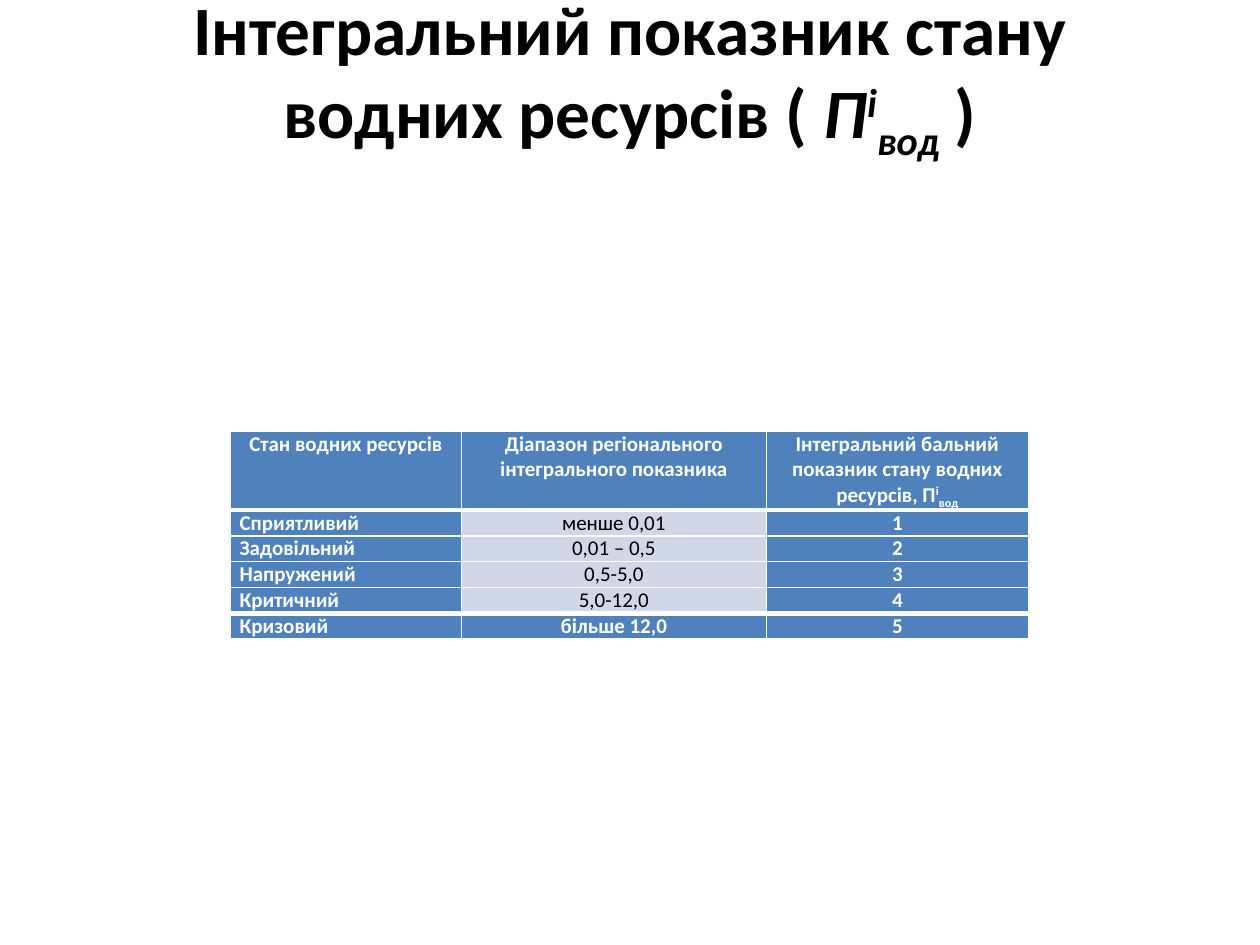
from dataclasses import dataclass

from lxml import etree
from pptx import Presentation
from pptx import util as u
from pptx.dml.color import RGBColor
from pptx.enum import text
from pptx.oxml.ns import qn

COLORS = {"black": "000000", "white": "FFFFFF", "blue": "4F81BD", "pale": "D0D8E8"}
FONT = "Calibri"
THIN, THICK = 1, 3
COLUMN_WIDTHS = (4.65, 6.15, 5.28)
HEADER_HEIGHT, ROW_HEIGHT = 1.55, 0.52


@dataclass
class Piece:
    text: str
    italic: bool = False
    baseline: int = 0


@dataclass
class CellStyle:
    fill: str = "blue"
    color: str = "white"
    bold: bool = True
    align: text.PP_ALIGN = text.PP_ALIGN.CENTER
    anchor: text.MSO_ANCHOR = text.MSO_ANCHOR.TOP


TITLE = [
    Piece("Інтегральний показник стану водних ресурсів ( "),
    Piece("П", italic=True),
    Piece("і", italic=True, baseline=30),
    Piece("вод", italic=True, baseline=-25),
    Piece(" )\v"),
]
HEADER = [
    [Piece("Стан водних ресурсів")],
    [Piece("Діапазон регіонального інтегрального показника")],
    [
        Piece("Інтегральний бальний показник стану водних ресурсів, П"),
        Piece("і", baseline=30),
        Piece("вод", baseline=-25),
    ],
]
STATES = [
    ("Сприятливий", "менше 0,01"),
    ("Задовільний", "0,01 – 0,5"),
    ("Напружений", "0,5-5,0"),
    ("Критичний", "5,0-12,0"),
    ("Кризовий", "більше 12,0"),
]


def rgb(name: str) -> RGBColor:
    return RGBColor.from_string(COLORS[name])


def set_attributes(target, values: dict) -> None:
    for name, value in values.items():
        setattr(target, name, value)


def write_pieces(paragraph, pieces: list[Piece], size: float, color: str, bold: bool) -> None:
    """Write runs; a vertical tab at the end of a piece becomes a line break."""
    for piece in pieces:
        run = paragraph.add_run()
        run.text = piece.text.rstrip("\v")
        set_attributes(run.font, {"name": FONT, "size": u.Pt(size),
                                  "bold": bold, "italic": piece.italic})
        run.font.color.rgb = rgb(color)
        if piece.baseline:
            run._r.get_or_add_rPr().set("baseline", str(piece.baseline * 1000))
        if piece.text.endswith("\v"):
            paragraph.add_line_break()
    paragraph.font.size = u.Pt(size)


def add_title(slide) -> None:
    box = slide.shapes.add_textbox(u.Cm(1.27), u.Cm(0.76), u.Cm(22.86), u.Cm(3.18))
    set_attributes(box.text_frame, {"word_wrap": True,
                                    "vertical_anchor": text.MSO_ANCHOR.MIDDLE})
    paragraph = box.text_frame.paragraphs[0]
    paragraph.alignment = text.PP_ALIGN.CENTER
    write_pieces(paragraph, TITLE, 39.6, "black", True)


def add_borders(cell, top: int, bottom: int) -> None:
    properties = cell._tc.get_or_add_tcPr()
    widths = {"lnL": THIN, "lnR": THIN, "lnT": top, "lnB": bottom}
    for tag, width in widths.items():
        line = etree.SubElement(properties, qn(f"a:{tag}"), w=str(u.Pt(width)))
        fill = etree.SubElement(line, qn("a:solidFill"))
        etree.SubElement(fill, qn("a:srgbClr"), val=COLORS["white"])


def cell_style(row: int, column: int) -> CellStyle:
    if row == 0:
        return CellStyle()
    if column == 0:
        return CellStyle(align=text.PP_ALIGN.JUSTIFY)
    if column == 1:
        middle = text.MSO_ANCHOR.MIDDLE
        if row == len(STATES):
            return CellStyle(anchor=middle)
        return CellStyle("pale", "black", False, anchor=middle)
    return CellStyle()


def fill_cell(cell, pieces: list[Piece], row: int, column: int) -> None:
    style = cell_style(row, column)
    last = len(STATES)
    add_borders(cell, THICK if row in (1, last) else THIN,
                THICK if row in (0, last - 1) else THIN)
    cell.fill.solid()
    cell.fill.fore_color.rgb = rgb(style.fill)
    set_attributes(cell, {"margin_left": u.Cm(0.18), "margin_right": u.Cm(0.18),
                          "margin_top": 0, "margin_bottom": 0,
                          "vertical_anchor": style.anchor})
    paragraph = cell.text_frame.paragraphs[0]
    paragraph.alignment = style.align
    write_pieces(paragraph, pieces, 12, style.color, style.bold)


def add_states_table(slide) -> None:
    rows = [HEADER] + [
        [[Piece(state)], [Piece(interval)], [Piece(str(score))]]
        for score, (state, interval) in enumerate(STATES, 1)
    ]
    height = HEADER_HEIGHT + ROW_HEIGHT * len(STATES)
    table = slide.shapes.add_table(len(rows), len(COLUMN_WIDTHS), u.Cm(4.65), u.Cm(8.69),
                                   u.Cm(sum(COLUMN_WIDTHS)), u.Cm(height)).table
    for column, width in zip(table.columns, COLUMN_WIDTHS):
        column.width = u.Cm(width)
    for row_index, cells in enumerate(rows):
        table.rows[row_index].height = u.Cm(ROW_HEIGHT if row_index else HEADER_HEIGHT)
        for column_index, pieces in enumerate(cells):
            fill_cell(table.cell(row_index, column_index), pieces, row_index, column_index)


def main() -> None:
    presentation = Presentation()
    set_attributes(presentation, {"slide_width": u.Cm(25.4), "slide_height": u.Cm(19.05)})
    slide = presentation.slides.add_slide(presentation.slide_layouts[6])
    add_title(slide)
    add_states_table(slide)
    presentation.save("out.pptx")


if __name__ == "__main__":
    main()
